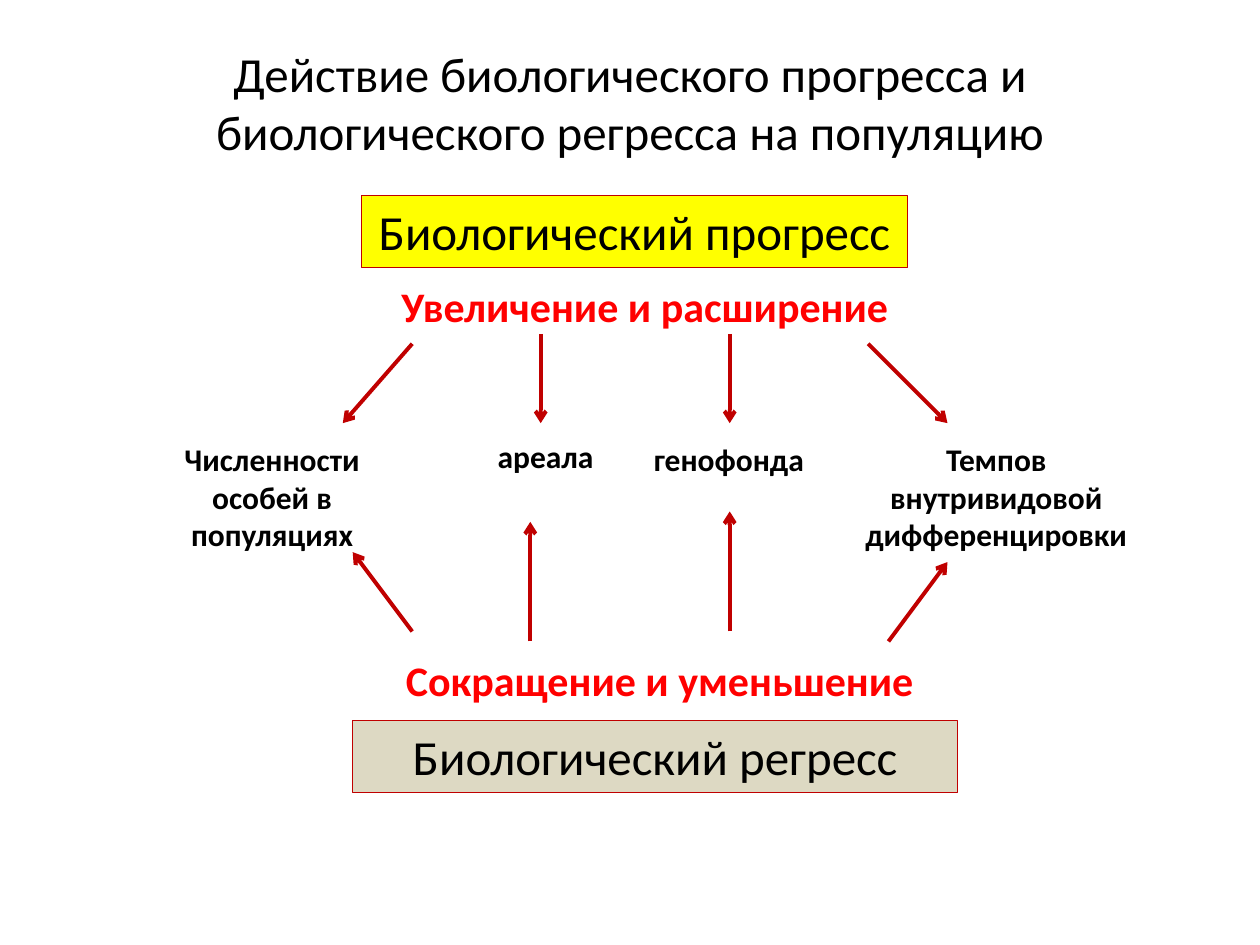
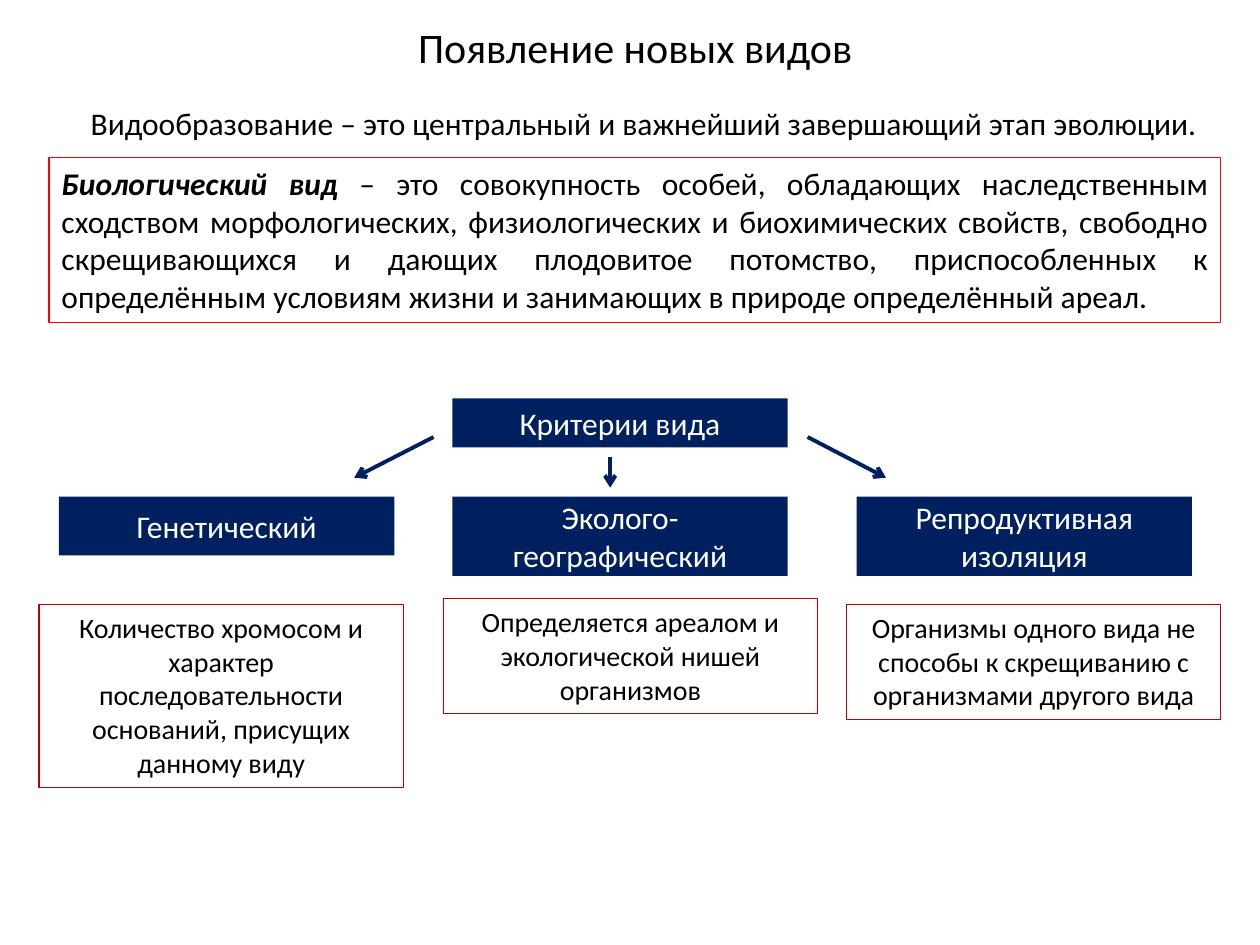
from lxml.etree import SubElement
from pptx import Presentation
from pptx.dml.color import RGBColor
from pptx.enum.shapes import MSO_CONNECTOR as Connector, MSO_SHAPE as Shape
from pptx.enum.text import MSO_ANCHOR as Anchor, MSO_AUTO_SIZE as AutoSize, PP_ALIGN as Align
from pptx.oxml.ns import qn
from pptx.util import Cm, Pt

COLORS = {
    "black": "000000",
    "white": "FFFFFF",
    "red": "FF0000",
    "dark_red": "C00000",
    "yellow": "FFFF00",
    "sand": "DDD9C3",
    "navy": "002060",
}
FONT = "Calibri"
TITLE_ONLY = 5


def color(name):
    return RGBColor.from_string(COLORS[name])


class Deck:
    """Holds the shared style and the slide being built."""

    def __init__(self):
        self.prs = Presentation()
        self.prs.slide_width, self.prs.slide_height = Cm(25.4), Cm(19.05)
        self.slide = None

    def new_slide(self, title, at, size):
        self.slide = self.prs.slides.add_slide(self.prs.slide_layouts[TITLE_ONLY])
        heading = self.slide.shapes.title
        heading.left, heading.top, heading.width, heading.height = map(Cm, at)
        self.set_text(heading, title, size)

    def set_text(self, shape, text, size, ink="black", bold=None, align=Align.CENTER,
                 anchor=Anchor.TOP):
        frame = shape.text_frame
        frame.word_wrap = True
        frame.auto_size = AutoSize.NONE
        frame.vertical_anchor = anchor
        paragraph = frame.paragraphs[0]
        paragraph.alignment = align
        paragraph.font.name, paragraph.font.size = FONT, Pt(size)
        paragraph.font.bold = bold
        paragraph.font.color.rgb = color(ink)
        paragraph.add_run().text = text
        return paragraph

    def label(self, text, at, size=18, **style):
        box = self.slide.shapes.add_textbox(*map(Cm, at))
        return self.set_text(box, text, size, **style)

    def box(self, text, at, size=18, fill=None, line=None, **style):
        box = self.slide.shapes.add_shape(Shape.RECTANGLE, *map(Cm, at))
        box.shadow.inherit = False
        if fill:
            box.fill.solid()
            box.fill.fore_color.rgb = color(fill)
        else:
            box.fill.background()
        if line:
            box.line.color.rgb = color(line)
            box.line.width = Pt(0.75)
        else:
            box.line.fill.background()
        return self.set_text(box, text, size, **style)

    def arrow(self, start, end, ink):
        arrow = self.slide.shapes.add_connector(
            Connector.STRAIGHT, *map(Cm, (*start, *end)))
        arrow.line.color.rgb = color(ink)
        arrow.line.width = Pt(2.25)
        properties = arrow._element.spPr
        SubElement(properties.find(qn("a:ln")), qn("a:tailEnd"), type="arrow")
        SubElement(properties, qn("a:effectLst"))


def build_progress_slide(deck):
    deck.new_slide("Действие биологического прогресса и биологического регресса на популяцию",
                   (1.7, 0.74, 22, 2.64), 28)

    # Progress above, regress below
    deck.box("Биологический прогресс", (7.29, 3.94, 11, 1.45), 28, "yellow", "dark_red")
    deck.label("Увеличение и расширение", (6.7, 5.54, 12.6, 1.28), 24, ink="red", bold=True)
    deck.label("Сокращение и уменьшение", (7.9, 13.06, 10.8, 1.28), 24, ink="red", bold=True)
    deck.box("Биологический регресс", (7.11, 14.53, 12.19, 1.45), 28, "sand", "dark_red")

    # Affected features: text, place, arrow from progress, arrow from regress
    arrow_bottom = 8.53
    features = [
        ("Численности особей в популяциях", (2.69, 8.74, 5.59, 2.57),
         (8.31, 6.93), 6.91, (8.31, 12.73), (7.11, 11.13)),
        ("ареала", (9.3, 8.69, 3.4, 1.02),
         (10.9, 6.73), 10.9, (10.69, 12.93), (10.69, 10.52)),
        ("генофонда", (12.7, 8.74, 3.99, 1.02),
         (14.71, 6.73), 14.71, (14.71, 12.73), (14.71, 10.31)),
        ("Темпов внутривидовой дифференцировки", (17.09, 8.74, 5.99, 2.57),
         (17.5, 6.93), 19.1, (17.91, 12.93), (19.1, 11.33)),
    ]
    for feature, at, progress_start, progress_x, regress_start, regress_end in features:
        deck.label(feature, at, bold=True)
        deck.arrow(progress_start, (progress_x, arrow_bottom), "dark_red")
        deck.arrow(regress_start, regress_end, "dark_red")


def build_species_slide(deck):
    deck.new_slide("Появление новых видов", (5.16, 0.3, 15.29, 1.28), 24)

    # Introduction and definition
    intro = deck.label("Видообразование – это центральный и важнейший завершающий этап эволюции.",
                       (0.58, 1.98, 24.21, 1.02), align=Align.JUSTIFY)
    intro._p.get_or_add_pPr().set("indent", str(Cm(1)))

    definition = deck.box("Биологический вид", (0.99, 3.18, 23.62, 3.33), line="red",
                          align=Align.JUSTIFY)
    term = definition.runs[0].font
    term.bold = term.italic = True
    definition.add_run().text = (
        " – это совокупность особей, обладающих наследственным сходством морфологических, "
        "физиологических и биохимических свойств, свободно скрещивающихся и дающих плодовитое "
        "потомство, приспособленных к определённым условиям жизни и занимающих в природе "
        "определённый ареал.")

    # Criteria: name, left, height, description, its place, arrow
    width, middle = 6.76, 9.12
    navy_box = {"fill": "navy", "ink": "white", "anchor": Anchor.MIDDLE}
    deck.box("Критерии вида", (middle, 8.03, width, 0.99), **navy_box)
    criteria = [
        ("Генетический", 1.19, 1.19,
         "Количество хромосом и характер последовательности оснований, присущих данному виду",
         (0.79, 12.19, 7.34, 3.68), (8.74, 8.81), (7.14, 9.63)),
        ("Эколого-географический", middle, 1.6,
         "Определяется ареалом и экологической нишей организмов",
         (8.94, 12.07, 7.54, 2.31), (12.3, 9.22), (12.3, 9.83)),
        ("Репродуктивная изоляция", 17.27, 1.6,
         "Организмы одного вида не способы к скрещиванию с организмами другого вида",
         (17.07, 12.19, 7.54, 2.31), (16.28, 8.81), (17.86, 9.63)),
    ]
    for criterion, left, height, description, at, start, end in criteria:
        deck.box(criterion, (left, 10.01, width, height), **navy_box)
        deck.arrow(start, end, "navy")
        deck.box(description, at, 16, line="dark_red")


def main():
    deck = Deck()
    build_progress_slide(deck)
    build_species_slide(deck)
    deck.prs.save("out.pptx")


if __name__ == "__main__":
    main()
